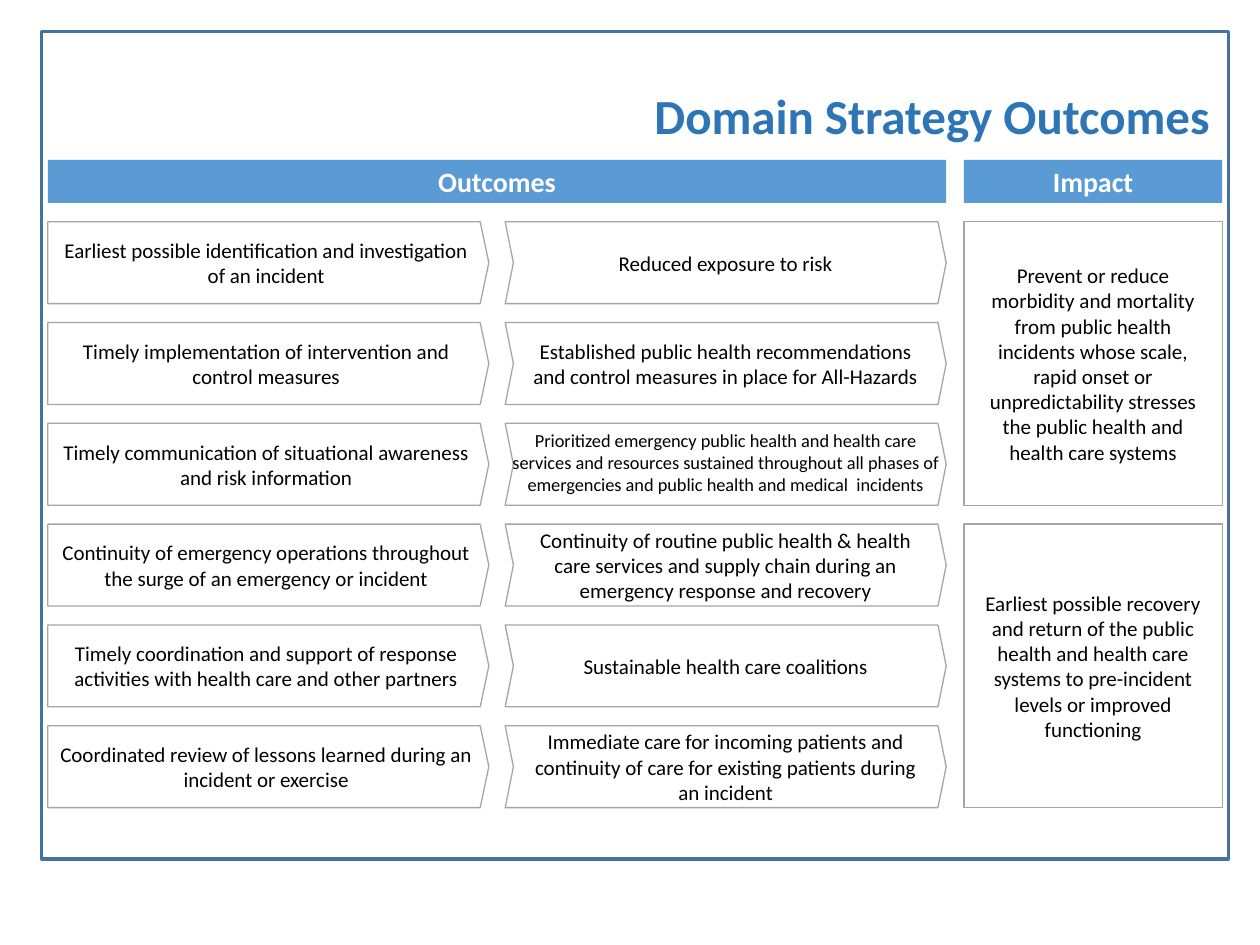
"""Build the Domain Strategy Outcomes slide with python-pptx."""
import pptx
import pptx.util
import pptx.dml.color
import pptx.enum.shapes
import pptx.enum.text

KIND = pptx.enum.shapes.MSO_SHAPE
ALIGN = pptx.enum.text.PP_ALIGN
MIDDLE = pptx.enum.text.MSO_ANCHOR.MIDDLE
TOP = pptx.enum.text.MSO_ANCHOR.TOP

TITLE = "Domain Strategy Outcomes"
STEPS = [
    "Earliest possible identification and investigation of an incident",
    "Timely implementation of intervention and control measures",
    "Timely communication of situational awareness and risk information",
    "Continuity of emergency operations throughout the surge of an emergency or incident",
    "Timely coordination and support of response activities with health care and other partners",
    "Coordinated review of lessons learned during an incident or exercise",
]
GAINS = [
    "Reduced exposure to risk",
    "Established public health recommendations and control measures in place for All-Hazards",
    "",
    "Continuity of routine public health & health care services and supply chain during an "
    "emergency response and recovery",
    "Sustainable health care coalitions",
    "Immediate care for incoming patients and continuity of care for existing patients during "
    "an incident",
]
CARE = ("Prioritized emergency public health and health care services and resources sustained "
        "throughout all phases of emergencies and public health and medical  incidents")
IMPACTS = [
    "Prevent or reduce morbidity and mortality from public health incidents whose scale, rapid "
    "onset or unpredictability stresses the public health and health care systems",
    "Earliest possible recovery and return of the public health and health care systems to "
    "pre-incident levels or improved functioning",
]

THEME = {
    "font": "Calibri",
    "frame": "43739E", "title": "2E75B6", "head": "5B9BD5",
    "edge": "A5A5A5", "white": "FFFFFF", "ink": "000000",
    "big": 28, "mid": 16, "body": 12, "small": 10.5,
}
WIDE, HIGH = 10, 7.5
LEFT, NEXT, LAST = 0.38, 4.01, 7.65
ARROW, SIDE = 3.5, 2.05
FIRST, PITCH, ROW = 1.76, 0.8, 0.65
SPAN = len(STEPS) // len(IMPACTS)
TALL = (SPAN - 1) * PITCH + ROW
HEAD = (1.27, 0.34)


def tint(name):
    """Return a theme colour."""
    return pptx.dml.color.RGBColor.from_string(THEME[name])


def apply(part, look):
    """Set each attribute listed in look on part."""
    for key, value in look.items():
        setattr(part, key, value)


def place(shape, *spot):
    """Move and size a shape in inches."""
    sides = ("left", "top", "width", "height")
    apply(shape, dict(zip(sides, map(pptx.util.Inches, spot))))


def write(shape, text, size="body", ink="ink", bold=False, align=ALIGN.CENTER,
          anchor=MIDDLE, pad=(0.1, 0.1)):
    """Fill a shape with one formatted paragraph."""
    frame = shape.text_frame
    across, down = map(pptx.util.Inches, pad)
    apply(frame, {"text": text, "word_wrap": True, "vertical_anchor": anchor,
                  "auto_size": pptx.enum.text.MSO_AUTO_SIZE.NONE,
                  "margin_left": across, "margin_right": across,
                  "margin_top": down, "margin_bottom": down})
    para = frame.paragraphs[0]
    para.alignment = align
    for run in para.runs:
        apply(run.font, {"name": THEME["font"], "bold": bold,
                         "size": pptx.util.Pt(THEME[size])})
        run.font.color.rgb = tint(ink)


def draw(home, kind, spot, fill=None, line=None, width=0.75, bend=None):
    """Add a preset shape with plain fill and line."""
    shape = home.add_shape(kind, *map(pptx.util.Inches, spot))
    shape.shadow.inherit = False
    if fill:
        shape.fill.solid()
        shape.fill.fore_color.rgb = tint(fill)
    else:
        shape.fill.background()
    if line:
        shape.line.color.rgb = tint(line)
        shape.line.width = pptx.util.Pt(width)
    else:
        shape.line.fill.background()
    if bend:
        shape.adjustments[0] = bend
    return shape


def main():
    """Build and save the slide."""
    deck = pptx.Presentation()
    apply(deck, {"slide_width": pptx.util.Inches(WIDE),
                 "slide_height": pptx.util.Inches(HIGH)})
    slide = deck.slides.add_slide(deck.slide_layouts[5])
    shapes = slide.shapes

    draw(shapes, KIND.RECTANGLE, (0.33, 0.25, 9.42, 6.57), line="frame", width=2)
    place(shapes.title, LEFT, 0.42, 9.32, 0.99)
    write(shapes.title, TITLE, "big", "title", True, ALIGN.RIGHT, pad=(0.1, 0.05))

    heads = [("Outcomes", LEFT, NEXT + ARROW - LEFT), ("Impact", LAST, SIDE)]
    for text, left, width in heads:
        bar = draw(shapes, KIND.RECTANGLE, (left, HEAD[0], width, HEAD[1]), "head")
        write(bar, text, "mid", "white", True)

    for spot, text in enumerate(IMPACTS):
        top = FIRST + spot * SPAN * PITCH
        box = draw(shapes, KIND.RECTANGLE, (LAST, top, SIDE, TALL), "white", "edge")
        write(box, text)

    for row, (step, gain) in enumerate(zip(STEPS, GAINS)):
        top = FIRST + row * PITCH
        tag = draw(shapes, KIND.PENTAGON, (LEFT, top, ARROW, ROW), None, "edge", bend=0.105)
        write(tag, step)
        home = shapes if gain else shapes.add_group_shape().shapes
        arrow = draw(home, KIND.CHEVRON, (NEXT, top, ARROW, ROW), "white", "edge", bend=0.1)
        if gain:
            write(arrow, gain)
        else:
            spot = (NEXT - 0.07, top, ARROW + 0.14, ROW)
            note = home.add_textbox(*map(pptx.util.Inches, spot))
            write(note, CARE, "small", anchor=TOP, pad=(0.1, 0.05))

    deck.save("out.pptx")


if __name__ == "__main__":
    main()
